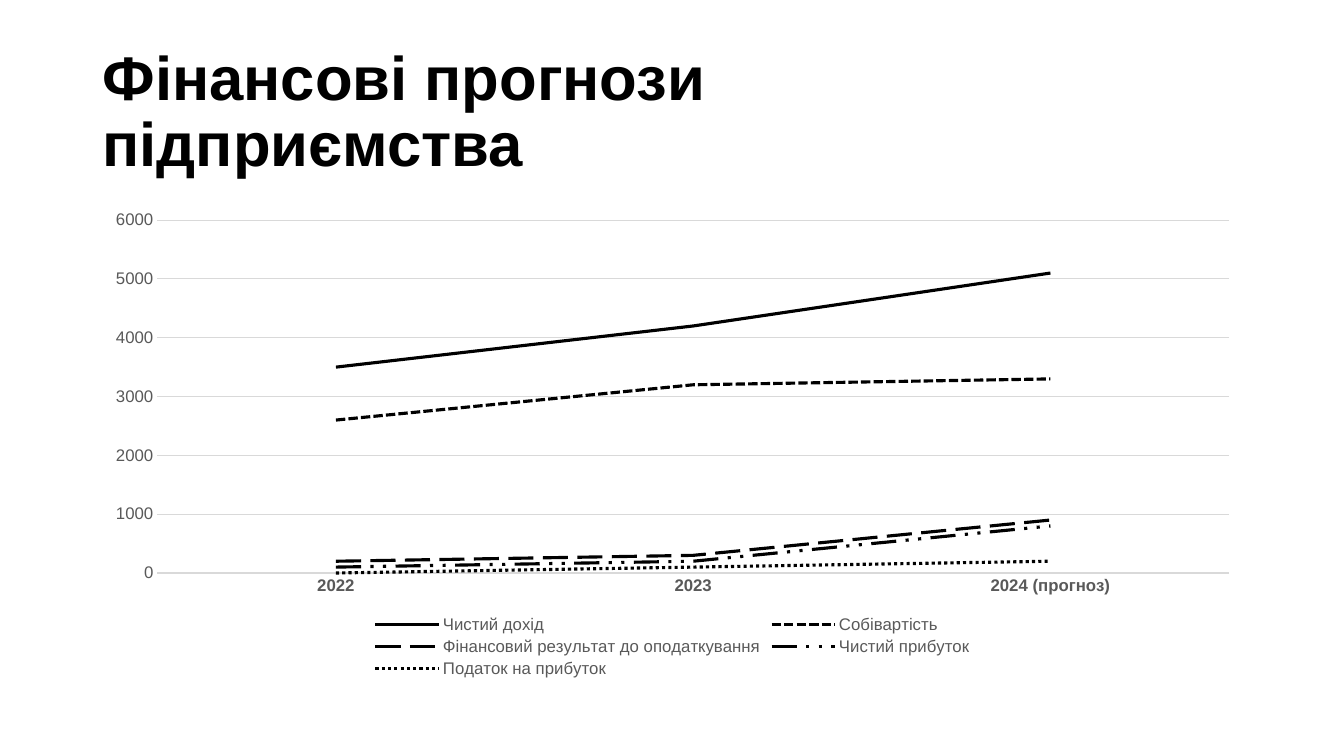
from pptx import Presentation
from pptx.chart.data import CategoryChartData
from pptx.dml.color import RGBColor
from pptx.enum.chart import XL_CHART_TYPE as CHART, XL_LEGEND_POSITION as LEGEND
from pptx.enum.chart import XL_MARKER_STYLE as MARKER, XL_TICK_MARK as TICK
from pptx.enum.dml import MSO_LINE as DASH
from pptx.enum.text import MSO_ANCHOR as ANCHOR
from pptx.util import Inches, Pt

BLACK = RGBColor(0x00, 0x00, 0x00)
GRAY = RGBColor(0x59, 0x59, 0x59)
GRID = RGBColor(0xD9, 0xD9, 0xD9)

YEARS = ["2022", "2023", "2024 (прогноз)"]
FORECASTS = [
    ("Чистий дохід", (3500, 4200, 5100), DASH.SOLID),
    ("Собівартість", (2600, 3200, 3300), DASH.SQUARE_DOT),
    ("Фінансовий результат до оподаткування", (200, 300, 900), DASH.LONG_DASH),
    ("Чистий прибуток", (100, 200, 800), DASH.DASH_DOT_DOT),
    ("Податок на прибуток", (0, 100, 200), DASH.ROUND_DOT),
]


class SlideBuilder:
    font_name = "Arial"

    def __init__(self, slide):
        self.s = slide

    def style_font(self, font, size, color, bold=False):
        font.name = self.font_name
        font.size = Pt(size)
        font.bold = bold
        font.color.rgb = color

    def style_line(self, line, color, width, dash=DASH.SOLID):
        line.color.rgb = color
        line.width = Pt(width)
        line.dash_style = dash

    def text(self, text, box, size=18, color=BLACK, bold=False,
             anchor=ANCHOR.MIDDLE, spacing=1.0):
        tf = self.s.shapes.add_textbox(*map(Inches, box)).text_frame
        tf.word_wrap = True
        tf.vertical_anchor = anchor
        p = tf.paragraphs[0]
        p.text = text
        p.line_spacing = spacing
        for r in p.runs:
            self.style_font(r.font, size, color, bold)

    def axis(self, axis, bold=False):
        axis.major_tick_mark = axis.minor_tick_mark = TICK.NONE
        self.style_font(axis.tick_labels.font, 12, GRAY, bold)

    def line_chart(self, categories, rows, box):
        data = CategoryChartData()
        data.categories = categories
        for name, values, _ in rows:
            data.add_series(name, values)
        chart = self.s.shapes.add_chart(CHART.LINE, *map(Inches, box), data).chart
        chart.has_title = False
        self.style_font(chart.font, 10, BLACK)

        self.axis(chart.category_axis, bold=True)
        self.style_line(chart.category_axis.format.line, GRID, 0.75)
        values_axis = chart.value_axis
        self.axis(values_axis)
        values_axis.minimum_scale, values_axis.maximum_scale = 0, 6000
        values_axis.major_unit = 1000
        values_axis.format.line.fill.background()
        self.style_line(values_axis.major_gridlines.format.line, GRID, 0.75)

        chart.has_legend = True
        chart.legend.position = LEGEND.BOTTOM
        chart.legend.include_in_layout = False
        self.style_font(chart.legend.font, 12, GRAY)

        plot = chart.plots[0]
        plot.vary_by_categories = False
        for series, (_, _, dash) in zip(plot.series, rows):
            series.smooth = False
            series.marker.style = MARKER.NONE
            self.style_line(series.format.line, BLACK, 2.25, dash)


def main():
    prs = Presentation()
    prs.slide_width, prs.slide_height = Inches(13.33), Inches(7.5)
    builder = SlideBuilder(prs.slides.add_slide(prs.slide_layouts[6]))
    builder.text("Фінансові прогнози\nпідприємства", (0.92, 0.4, 11.5, 1.45),
                 size=44, bold=True, spacing=0.9)
    builder.line_chart(YEARS, FORECASTS, (0.92, 2, 11.5, 4.76))
    prs.save("out.pptx")


if __name__ == "__main__":
    main()
